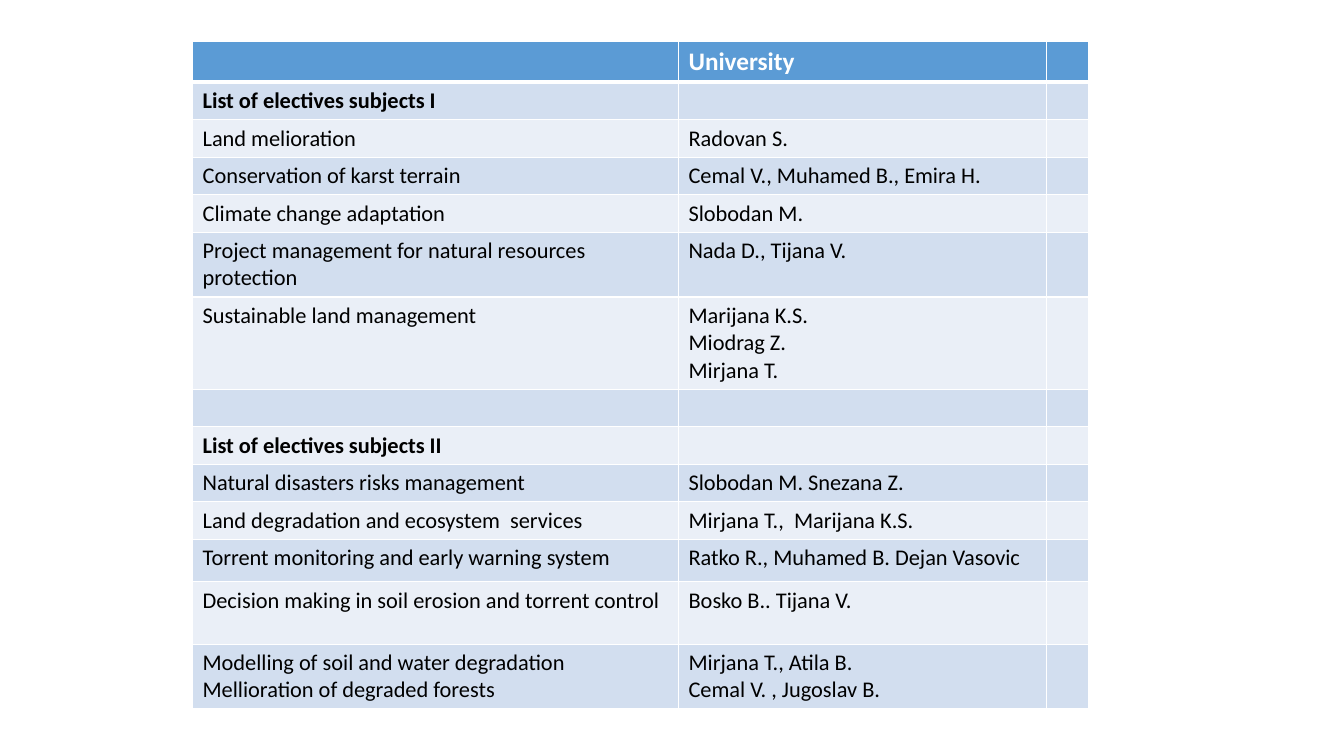
from dataclasses import dataclass

from lxml.etree import SubElement
from pptx import Presentation
from pptx.dml.color import RGBColor
from pptx.oxml.ns import qn
from pptx.util import Inches, Pt


@dataclass(frozen=True)
class Theme:
    """Colours, type sizes and line widths of the slide."""

    font: str = "Calibri"
    header_size: int = 18
    body_size: int = 16
    header_fill: str = "5B9BD5"
    band_fills: tuple = ("D2DEEF", "EAEFF7")
    header_text: str = "FFFFFF"
    body_text: str = "000000"
    border: str = "FFFFFF"
    thin: int = 1
    thick: int = 3


THEME = Theme()
SLIDE_WIDTH, SLIDE_HEIGHT = Inches(13.33), Inches(7.5)
TABLE_LEFT, TABLE_TOP = Inches(1.91), Inches(0.41)
COLUMN_WIDTHS = (4.82, 3.65, 0.42)
HEADER_HEIGHT, ROW_HEIGHT = 0.32, 0.36
TALLER_ROWS = {11: 0.42, 12: 0.62}
SECTION_ROWS = (1, 8)
ROWS = (
    ("", "University"),
    ("List of electives subjects I", ""),
    ("Land melioration", "Radovan S."),
    ("Conservation of karst terrain", "Cemal V., Muhamed B., Emira H."),
    ("Climate change adaptation", "Slobodan M."),
    ("Project management for natural resources protection", "Nada D., Tijana V."),
    ("Sustainable land management", "Marijana K.S.\nMiodrag Z.\nMirjana T."),
    ("", ""),
    ("List of electives subjects II", ""),
    ("Natural disasters risks management", "Slobodan M. Snezana Z."),
    ("Land degradation and ecosystem  services", "Mirjana T.,  Marijana K.S."),
    ("Torrent monitoring and early warning system", "Ratko R., Muhamed B. Dejan Vasovic"),
    ("Decision making in soil erosion and torrent control", "Bosko B.. Tijana V."),
    (
        "Modelling of soil and water degradation\nMellioration of degraded forests",
        "Mirjana T., Atila B.\nCemal V. , Jugoslav B.",
    ),
)


def set_borders(cell, top, bottom):
    """Draw the four cell borders, with the given top and bottom widths in points."""
    properties = cell._tc.get_or_add_tcPr()
    widths = {"a:lnL": THEME.thin, "a:lnR": THEME.thin, "a:lnT": top, "a:lnB": bottom}
    for tag, width in widths.items():
        line = SubElement(properties, qn(tag), w=str(Pt(width)))
        fill = SubElement(line, qn("a:solidFill"))
        SubElement(fill, qn("a:srgbClr"), val=THEME.border)


def write_text(cell, text, size, color, bold):
    """Write each line of text as a paragraph, or size the empty one."""
    if not text:
        paragraph = cell.text_frame.paragraphs[0]
        SubElement(paragraph._p, qn("a:endParaRPr"), sz=str(size * 100))
        return
    for index, line in enumerate(text.split("\n")):
        frame = cell.text_frame
        paragraph = frame.add_paragraph() if index else frame.paragraphs[0]
        run = paragraph.add_run()
        run.text = line
        run.font.name = THEME.font
        run.font.size = Pt(size)
        run.font.bold = bold
        run.font.color.rgb = RGBColor.from_string(color)


def format_cell(cell, row_index, text):
    """Give a cell its borders, band fill and text."""
    is_header = row_index == 0
    top = THEME.thick if row_index == 1 else THEME.thin
    set_borders(cell, top, THEME.thick if is_header else THEME.thin)
    fill = THEME.header_fill if is_header else THEME.band_fills[(row_index - 1) % 2]
    cell.fill.solid()
    cell.fill.fore_color.rgb = RGBColor.from_string(fill)
    size = THEME.header_size if is_header else THEME.body_size
    color = THEME.header_text if is_header else THEME.body_text
    write_text(cell, text, size, color, is_header or row_index in SECTION_ROWS)


def add_subject_table(slide):
    """Add the table of elective subjects and their teachers."""
    heights = [HEADER_HEIGHT] + [
        TALLER_ROWS.get(index, ROW_HEIGHT) for index in range(1, len(ROWS))
    ]
    table = slide.shapes.add_table(
        len(ROWS), len(COLUMN_WIDTHS), TABLE_LEFT, TABLE_TOP,
        Inches(sum(COLUMN_WIDTHS)), Inches(sum(heights)),
    ).table
    for column, width in zip(table.columns, COLUMN_WIDTHS):
        column.width = Inches(width)
    for row_index, (row, height) in enumerate(zip(table.rows, heights)):
        row.height = Inches(height)
        for cell, text in zip(row.cells, (*ROWS[row_index], "")):
            format_cell(cell, row_index, text)


def main():
    """Build the slide and save it."""
    presentation = Presentation()
    presentation.slide_width = SLIDE_WIDTH
    presentation.slide_height = SLIDE_HEIGHT
    slide = presentation.slides.add_slide(presentation.slide_layouts[6])
    add_subject_table(slide)
    presentation.save("out.pptx")


if __name__ == "__main__":
    main()
